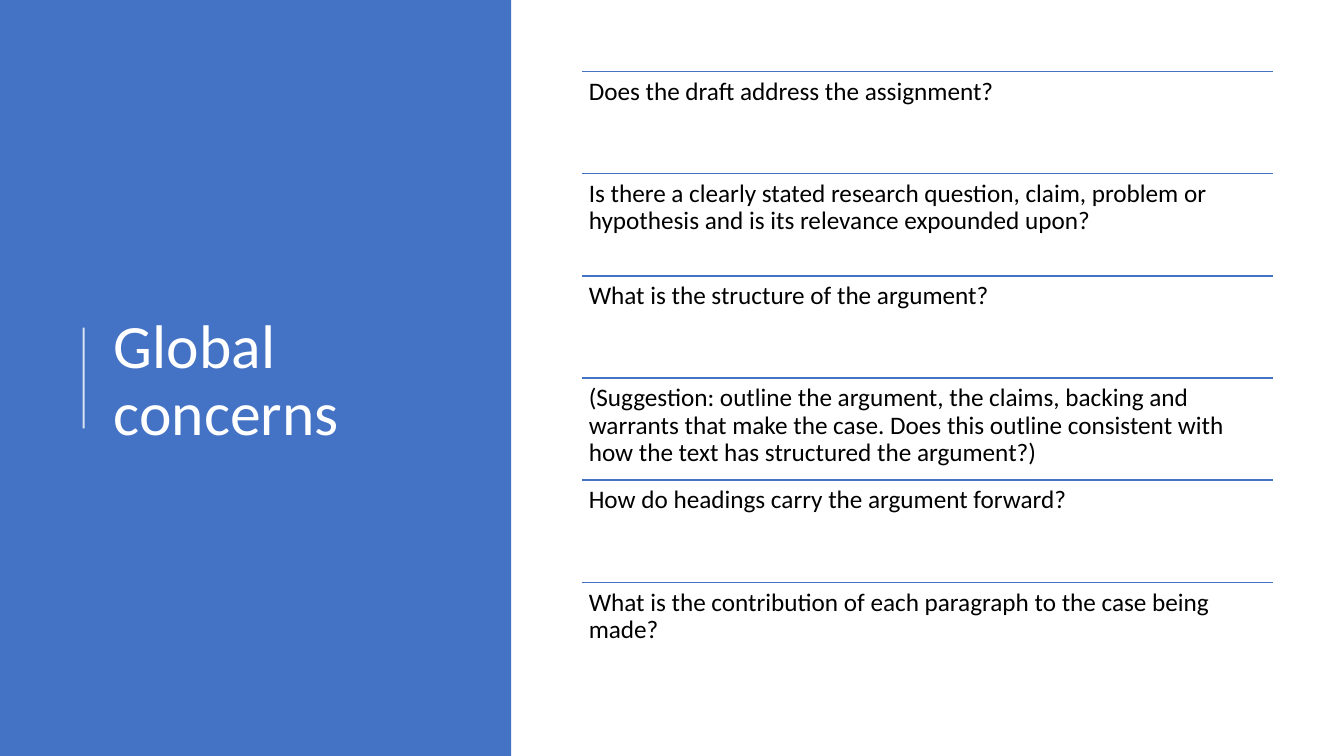
from dataclasses import dataclass

from lxml.etree import SubElement
from pptx import Presentation
from pptx.dml.color import RGBColor
from pptx.enum.shapes import MSO_CONNECTOR, MSO_SHAPE
from pptx.enum.text import MSO_ANCHOR
from pptx.oxml.ns import qn
from pptx.util import Inches, Pt


@dataclass(frozen=True)
class Theme:
    accent: RGBColor = RGBColor(0x44, 0x72, 0xC4)
    light: RGBColor = RGBColor(0xFF, 0xFF, 0xFF)
    dark: RGBColor = RGBColor(0x00, 0x00, 0x00)
    font: str = "Calibri"
    title_size: int = 44
    body_size: int = 18


THEME = Theme()
LIST_LEFT, LIST_TOP, LIST_WIDTH, LIST_HEIGHT = 5.77, 0.71, 6.86, 6.08
QUESTIONS = [
    "Does the draft address the assignment?",
    "Is there a clearly stated research question, claim, problem or hypothesis "
    "and is its relevance expounded upon?",
    "What is the structure of the argument?",
    "(Suggestion: outline the argument, the claims, backing and warrants that make "
    "the case. Does this outline consistent with how the text has structured the argument?)",
    "How do headings carry the argument forward?",
    "What is the contribution of each paragraph to the case being made?",
]


def add_panel(page, left, top, width, height):
    """Add a plain rectangle in the accent colour."""
    panel = page.shapes.add_shape(
        MSO_SHAPE.RECTANGLE, Inches(left), Inches(top), Inches(width), Inches(height))
    panel.shadow.inherit = False
    panel.fill.solid()
    panel.fill.fore_color.rgb = THEME.accent
    panel.line.fill.background()


def add_rule(page, start, end, color, weight, opacity=100):
    """Add a straight line without shadow, with opacity in percent."""
    rule = page.shapes.add_connector(
        MSO_CONNECTOR.STRAIGHT, *(Inches(value) for value in (*start, *end)))
    rule.line.color.rgb = color
    rule.line.width = Pt(weight)
    if opacity < 100:
        for fill in rule.line._ln.iter(qn("a:srgbClr")):
            SubElement(fill, qn("a:alpha"), val=str(opacity * 1000))
    SubElement(rule._element.spPr, qn("a:effectLst"))


def add_text(page, text, left, top, width, height, size, color, anchor, insets):
    """Add a wrapped text box holding one paragraph."""
    box = page.shapes.add_textbox(
        Inches(left), Inches(top), Inches(width), Inches(height))
    frame = box.text_frame
    frame.word_wrap = True
    frame.vertical_anchor = anchor
    frame.margin_left = frame.margin_right = Inches(insets[0])
    frame.margin_top = frame.margin_bottom = Inches(insets[1])
    frame.text = text
    para = frame.paragraphs[0]
    para.line_spacing = 0.9
    span = para.runs[0]
    span.font.name = THEME.font
    span.font.size = Pt(size)
    span.font.color.rgb = color


def add_questions(page):
    """Stack the questions in equal rows, each under a rule."""
    row_height = LIST_HEIGHT / len(QUESTIONS)
    for index, question in enumerate(QUESTIONS):
        top = LIST_TOP + index * row_height
        add_rule(page, (LIST_LEFT, top), (LIST_LEFT + LIST_WIDTH, top), THEME.accent, 1)
        add_text(page, question, LIST_LEFT, top, LIST_WIDTH, row_height,
                 THEME.body_size, THEME.dark, MSO_ANCHOR.TOP, (0.07, 0.07))


def main():
    """Build the slide and save it."""
    deck = Presentation()
    deck.slide_width, deck.slide_height = Inches(13.33), Inches(7.5)
    page = deck.slides.add_slide(deck.slide_layouts[6])
    add_panel(page, 0, 0, 5.07, 7.5)
    add_rule(page, (0.83, 4.25), (0.83, 3.25), THEME.light, 1.5, opacity=80)
    add_text(page, "Global concerns", 1.03, 0.78, 3.69, 6.02,
             THEME.title_size, THEME.light, MSO_ANCHOR.MIDDLE, (0.1, 0.05))
    add_questions(page)
    deck.save("out.pptx")


if __name__ == "__main__":
    main()
